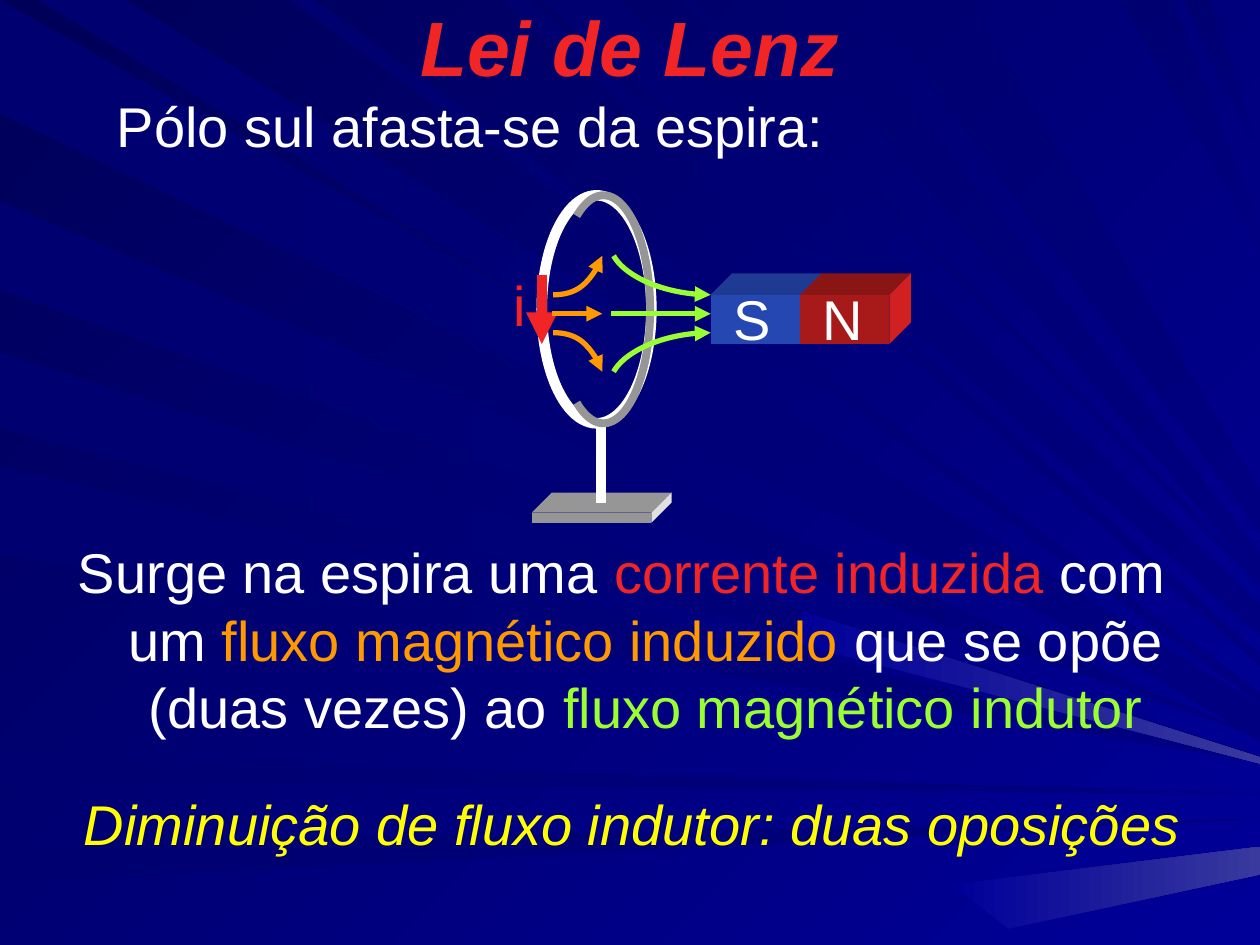
from pptx import Presentation
from pptx.dml.color import RGBColor
from pptx.enum.shapes import MSO_CONNECTOR, MSO_SHAPE
from pptx.enum.text import MSO_ANCHOR, PP_ALIGN
from pptx.oxml.ns import qn
from pptx.util import Inches, Pt
from lxml.etree import SubElement

COLUMNS, ROWS = 10, 7.5
WHITE = RGBColor.from_string("FFFFFF")
RED = RGBColor.from_string("F12525")
ORANGE = RGBColor.from_string("FF9900")
GREEN = RGBColor.from_string("99FF33")
YELLOW = RGBColor.from_string("FFFF00")
GRAY = RGBColor.from_string("969696")
PALE = RGBColor.from_string("E0E0E0")
SOUTH_FRONT = RGBColor.from_string("2447B2")
SOUTH_TOP = RGBColor.from_string("1E3A92")
NORTH_FRONT = RGBColor.from_string("A81A1A")
NORTH_TOP = RGBColor.from_string("8A1515")
NORTH_SIDE = RGBColor.from_string("D02020")
NIGHT = RGBColor.from_string("000058")
SHADE = RGBColor.from_string("000070")
NAVY = RGBColor.from_string("000080")
BLUE = RGBColor.from_string("000099")
MIST = RGBColor.from_string("39399E")

LEFT_RAYS = [(0, 0.9, 5.7), (1.6, 2.3, 5.85), (2.8, 3.4, 6), (3.7, 4.4, 6.05),
             (6, 6.2, 6.3), (6.7, 7, 6.5)]
TOP_RAYS = [(0.3, 1, 5.6), (2.3, 2.5, 5.5), (4, 4.2, 5.2), (4.3, 4.9, 4.8), (5.4, 5.5, 4.6),
            (6.1, 6.6, 4.4), (6.9, 7.7, 3.9), (8.9, 9.3, 1.8), (9.4, 9.6, 1.2)]


def add_text(para, text, size=32, color=WHITE, bold=False, italic=False):
    span = para.add_run()
    span.text = text
    font = span.font
    font.name, font.size, font.bold, font.italic = "Arial", Pt(size), bold, italic
    font.color.rgb = color


def paint(fill, start, end, angle):
    if start == end:
        fill.solid()
        fill.fore_color.rgb = start
        return
    fill.gradient()
    fill.gradient_angle = (360 - angle) % 360
    for stop, color in zip(fill.gradient_stops, (start, end)):
        stop.color.rgb = color


class Board:
    def __init__(self, deck):
        self.deck = deck
        self.page = deck.slides.add_slide(deck.slide_layouts[6])
        self.shapes = self.page.shapes

    def place(self, column, row):
        return (round(self.deck.slide_width * column / COLUMNS),
                round(self.deck.slide_height * row / ROWS))

    def outline(self, points, close):
        start, *rest = [self.place(*point) for point in points]
        builder = self.shapes.build_freeform(*start)
        builder.add_line_segments(rest, close=close)
        shape = builder.convert_to_shape()
        shape.shadow.inherit = False
        return shape

    def face(self, points, start, end=None, angle=0):
        shape = self.outline(points, True)
        paint(shape.fill, start, end or start, angle)
        shape.line.fill.background()

    def slab(self, left, top, width, height, depth, front, lid, side):
        right, bottom, back = left + width, top + height, top - depth
        self.face([(left, top), (right, top), (right, bottom), (left, bottom)], front)
        self.face([(left, top), (left + depth, back), (right + depth, back), (right, top)], lid)
        self.face([(right, top), (right + depth, back),
                   (right + depth, bottom - depth), (right, bottom)], side)

    def stroke(self, shape, color, width, arrow=None):
        shape.line.color.rgb = color
        shape.line.width = Pt(width)
        if arrow:
            SubElement(shape.line._get_or_add_ln(), qn("a:" + arrow), type="triangle")

    def curve(self, start, end, color, width, arrow):
        across, down = end[0] - start[0], end[1] - start[1]
        controls = [(start[0] + across / 2, start[1]),
                    (start[0] + across * 0.9, start[1] + down * 0.55)]
        shape = self.outline([start, *controls, end], False)
        shape.fill.background()
        track = next(shape._element.iter(qn("a:path")))
        steps = track.findall(qn("a:lnTo"))
        bend = SubElement(track, qn("a:cubicBezTo"))
        for step in steps:
            bend.append(step[0])
            track.remove(step)
        self.stroke(shape, color, width, arrow)

    def straight(self, start, end, color, width, arrow=None):
        line = self.shapes.add_connector(
            MSO_CONNECTOR.STRAIGHT, *self.place(*start), *self.place(*end))
        self.stroke(line, color, width, arrow)
        SubElement(line._element.spPr, qn("a:effectLst"))

    def loop(self, kind, column, row, width, height, color, weight):
        shape = self.shapes.add_shape(
            kind, *self.place(column, row), *self.place(width, height))
        shape.shadow.inherit = False
        shape.fill.background()
        self.stroke(shape, color, weight)
        return shape

    def words(self, column, row, width, height, parts, size=32, align=PP_ALIGN.LEFT,
              anchor=MSO_ANCHOR.TOP, hanging=0.38, **style):
        box = self.shapes.add_textbox(*self.place(column, row), *self.place(width, height))
        frame = box.text_frame
        frame.word_wrap = True
        frame.vertical_anchor = anchor
        para = frame.paragraphs[0]
        para.alignment = align
        para.line_spacing = Pt(size * 1.2)
        properties = para._p.get_or_add_pPr()
        properties.set("marL", str(Inches(hanging)))
        properties.set("indent", str(-Inches(hanging)))
        for text, color in parts:
            add_text(para, text, size=size, color=color, **style)


def draw_rays(board):
    paint(board.page.background.fill, NIGHT, BLUE, 45)
    for first, last, tip in LEFT_RAYS:
        board.face([(0, first), (COLUMNS, tip), (0, last)], SHADE, NAVY)
    for first, last, tip in TOP_RAYS:
        spread = (last - first) * 0.4
        board.face([(first, 0), (last, 0), (COLUMNS, tip), (COLUMNS, tip + spread)],
                   SHADE, NAVY, 45)
    board.face([(10, 6.94), (10, 6.72), (7.56, 7.02), (8, 7.37)], BLUE, MIST)
    board.face([(10, 6.06), (10, 6.01), (6.37, 4.85), (6.33, 5.11)], BLUE, MIST)


def draw_loop(board):
    board.loop(MSO_SHAPE.OVAL, 4.3, 1.55, 0.87, 1.81, WHITE, 6)
    board.slab(4.22, 4.07, 0.95, 0.08, 0.16, GRAY, GRAY, PALE)
    board.straight((4.77, 3.99), (4.77, 3.36), WHITE, 6)
    rim = board.loop(MSO_SHAPE.ARC, 4.42, 1.55, 0.74, 1.81, GRAY, 4.5)
    for index, degrees in enumerate((254, 106)):
        rim.adjustments[index] = degrees * 0.6
    board.straight((4.3, 2.18), (4.3, 2.73), RED, 6, "tailEnd")


def draw_magnet(board):
    width = 0.71
    poles = [("S", SOUTH_FRONT, SOUTH_TOP, SOUTH_FRONT),
             ("N", NORTH_FRONT, NORTH_TOP, NORTH_SIDE)]
    for index, (letter, *colors) in enumerate(poles):
        left = 5.64 + index * width
        board.slab(left, 2.34, width, 0.39, 0.17, *colors)
        board.words(left + 0.08, 2.21, 0.48, 0.75, [(letter, WHITE)])


def draw_flux(board):
    axis = 2.49
    board.straight((5.64, axis), (4.85, axis), GREEN, 3, "headEnd")
    board.straight((4.38, axis), (4.78, axis), ORANGE, 3, "tailEnd")
    for side in (-1, 1):
        near, far = axis + side * 0.15, axis + side * 0.46
        board.curve((5.64, near), (4.87, far), GREEN, 3, "headEnd")
        board.curve((4.39, near), (4.78, far), ORANGE, 3, "tailEnd")


def main():
    deck = Presentation()
    deck.slide_width, deck.slide_height = Inches(COLUMNS), Inches(ROWS)
    board = Board(deck)
    draw_rays(board)
    board.words(0.5, -0.03, 9, 0.79, [("Lei de Lenz", RED)], size=44, align=PP_ALIGN.CENTER,
                anchor=MSO_ANCHOR.MIDDLE, hanging=0, bold=True, italic=True)
    board.words(3.98, 2.1, 0.48, 0.75, [("i", RED)])
    draw_loop(board)
    board.words(0.83, 0.68, 6.93, 0.71, [("Pólo sul afasta-se da espira:", WHITE)])
    board.words(0.35, 4.22, 9.17, 1.67, [
        ("Surge na espira uma ", WHITE), ("corrente induzida", RED), (" com um ", WHITE),
        ("fluxo magnético induzido", ORANGE), (" que se opõe (duas vezes) ao ", WHITE),
        ("fluxo magnético indutor", GREEN)], align=PP_ALIGN.CENTER)
    draw_magnet(board)
    draw_flux(board)
    board.words(0.55, 6.22, 8.94, 0.84, [("Diminuição de fluxo indutor: duas oposições", YELLOW)],
                align=PP_ALIGN.CENTER, italic=True)
    deck.save("out.pptx")


if __name__ == "__main__":
    main()
